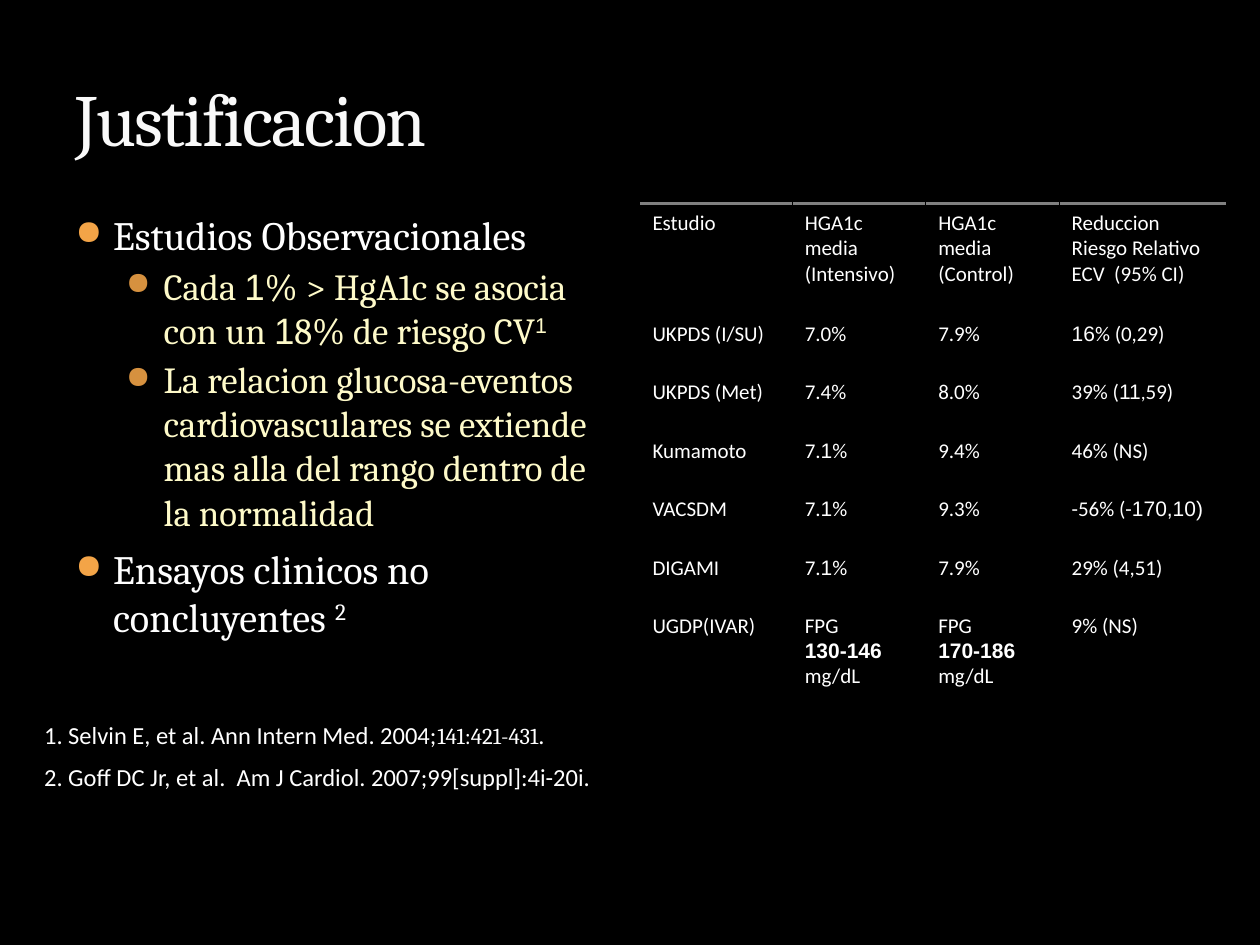
"""Build the slide "Justificacion": observational evidence beside a table of trials."""
from lxml import etree
from pptx import Presentation
from pptx.dml.color import RGBColor
from pptx.enum.text import MSO_ANCHOR, PP_ALIGN
from pptx.oxml.ns import qn
from pptx.util import Cm, Pt

LEFT, JUSTIFY = PP_ALIGN.LEFT, PP_ALIGN.JUSTIFY
BOTTOM = MSO_ANCHOR.BOTTOM
BLACK, WHITE, GREY = "000000", "FFFFFF", "808080"

ARIAL = {"name": "Arial"}
ARIAL_BOLD = {"name": "Arial", "bold": True}
SUPERSCRIPT = {"baseline": 30000}
ARIAL_SUPERSCRIPT = {"name": "Arial", "baseline": 30000}
CAMBRIA_SMALL = {"name": "Cambria", "size": 13}
SMALL = {"size": 11}

TITLE = "Justificacion"
LEVELS = [
    {"size": 23, "color": WHITE, "bullet": "F3A447", "indent": 0.76, "before": 6},
    {"size": 21, "color": "FEFAC9", "bullet": "D6913F", "indent": 1.78, "before": 3},
]
BULLETS = [
    (0, ["Estudios Observacionales"]),
    (1, ["Cada ", ("1", ARIAL), "% > HgA1c se asocia con un ", ("1", ARIAL),
         "8% de riesgo CV", ("1", ARIAL_SUPERSCRIPT)]),
    (1, ["La relacion glucosa-eventos cardiovasculares se extiende "
         "mas alla del rango dentro de la normalidad"]),
    (0, ["Ensayos clinicos no concluyentes ", ("2", SUPERSCRIPT)]),
]
REFERENCES = [
    ["1. Selvin E, et al. Ann Intern Med. 2004;", ("141:421-431", CAMBRIA_SMALL), "."],
    ["2. Goff DC Jr, et al.  Am J Cardiol. 2007;99[suppl]:4i-20i."],
]
SEVEN_ONE = [["7.", ("1", ARIAL), "%"]]
TRIALS = [
    [[["Estudio"]], [["HGA1c  media"], ["(Intensivo)"]], [["HGA1c  media"], ["(Control)"]],
     [["Reduccion Riesgo Relativo ECV  (95% CI)"]]],
    [[["UKPDS (I/SU)"]], [["7.0%"]], [["7.9%"]], [[("16", ARIAL), "% (0,29)"]]],
    [[["UKPDS (Met)"]], [["7.4%"]], [["8.0%"]],
     [["39% (", ("11", ARIAL), (",", SMALL), "59)"]]],
    [[["Kumamoto"]], SEVEN_ONE, [["9.4%"]], [["46% (NS)"]]],
    [[["VACSDM"]], SEVEN_ONE, [["9.3%"]], [["-56% (-", ("170,10)", ARIAL)]]],
    [[["DIGAMI"]], SEVEN_ONE, [["7.9%"]], [["29% (4,51)"]]],
    [[["UGDP(IVAR)"]],
     [["FPG"], [("130-146", ARIAL_BOLD), (" ", SMALL), "mg/dL"]],
     [["FPG"], [("170-186", ARIAL_BOLD)], ["mg/dL"]],
     [["9% (NS)"]]],
]
COLUMN_WIDTHS = [3.07, 2.69, 2.69, 3.38]
ROW_HEIGHTS = [2.24] + [1.18] * 5 + [2.74]


def rgb(value):
    """Turn a hex string into a colour."""
    return RGBColor.from_string(value)


def place(shape, left, top, width, height):
    """Set a shape's box in centimetres."""
    shape.left, shape.top = Cm(left), Cm(top)
    shape.width, shape.height = Cm(width), Cm(height)


def write(paragraph, pieces, name, size, color):
    """Fill a paragraph with pieces, each plain text or text with its overrides."""
    paragraph.font.name, paragraph.font.size = name, Pt(size)
    paragraph.font.color.rgb = rgb(color)
    for piece in pieces:
        text, style = (piece, {}) if isinstance(piece, str) else piece
        run = paragraph.add_run()
        run.text = text
        run.font.name = style.get("name", name)
        run.font.size = Pt(style.get("size", size))
        run.font.color.rgb = rgb(color)
        if "bold" in style:
            run.font.bold = style["bold"]
        if "baseline" in style:
            run.font._element.set("baseline", str(style["baseline"]))


def paragraphs_for(frame, items):
    """Yield a paragraph of the frame with each item."""
    for index, item in enumerate(items):
        yield (frame.add_paragraph() if index else frame.paragraphs[0]), item


def add_text_box(slide, *box):
    """Add a wrapping text box and return its frame."""
    frame = slide.shapes.add_textbox(*map(Cm, box)).text_frame
    frame.word_wrap = True
    return frame


def set_bullet(paragraph, color, indent):
    """Give a paragraph a round bullet with a hanging indent."""
    properties = paragraph._p.get_or_add_pPr()
    properties.set("marL", str(Cm(indent)))
    properties.set("indent", str(Cm(-0.76)))
    bullet_color = etree.SubElement(properties, qn("a:buClr"))
    etree.SubElement(bullet_color, qn("a:srgbClr"), val=color)
    etree.SubElement(properties, qn("a:buSzPct"), val="85000")
    etree.SubElement(properties, qn("a:buChar"), char="●")


def set_borders(cell, top_color, top_width):
    """Draw the four borders of a cell."""
    properties = cell._tc.get_or_add_tcPr()
    borders = [("lnL", BLACK, 0.75), ("lnR", BLACK, 0.75),
               ("lnT", top_color, top_width), ("lnB", BLACK, 0.75)]
    for position, (tag, color, width) in enumerate(borders):
        line = etree.Element(qn(f"a:{tag}"), w=str(Pt(width)))
        fill = etree.SubElement(line, qn("a:solidFill"))
        etree.SubElement(fill, qn("a:srgbClr"), val=color)
        properties.insert(position, line)


def add_title(slide):
    """Format and fill the title placeholder."""
    title = slide.shapes.title
    place(title, 1.27, 0.2, 22.86, 3.18)
    title.text_frame.vertical_anchor = BOTTOM
    paragraph = title.text_frame.paragraphs[0]
    paragraph.alignment = LEFT
    write(paragraph, [TITLE], "Cambria", 42, "F9F9F9")
    paragraph.runs[0].font._element.set("spc", "-100")


def add_bullets(slide):
    """Add the two-level list."""
    frame = add_text_box(slide, 1.27, 4.11, 11.23, 12.57)
    for paragraph, (level, pieces) in paragraphs_for(frame, BULLETS):
        look = LEVELS[level]
        paragraph.level = level
        paragraph.space_before = Pt(look["before"])
        set_bullet(paragraph, look["bullet"], look["indent"])
        write(paragraph, pieces, "Cambria", look["size"], look["color"])


def add_trials(slide):
    """Add the table of trials."""
    box = (12.9, 4.11, sum(COLUMN_WIDTHS), sum(ROW_HEIGHTS))
    table = slide.shapes.add_table(len(TRIALS), len(COLUMN_WIDTHS), *map(Cm, box)).table
    table.first_row = table.horz_banding = False
    for column, width in zip(table.columns, COLUMN_WIDTHS):
        column.width = Cm(width)
    for row, height in zip(table.rows, ROW_HEIGHTS):
        row.height = Cm(height)
    for row_index, trial in enumerate(TRIALS):
        top = (BLACK, 0.75) if row_index else (GREY, 2)
        for column_index, content in enumerate(trial):
            cell = table.cell(row_index, column_index)
            cell.fill.background()
            set_borders(cell, *top)
            for paragraph, pieces in paragraphs_for(cell.text_frame, content):
                paragraph.alignment = JUSTIFY if row_index or not column_index else LEFT
                write(paragraph, pieces, "Calibri", 12, WHITE)


def add_references(slide):
    """Add the numbered references."""
    frame = add_text_box(slide, 0.64, 14.4, 13.34, 1.75)
    for paragraph, pieces in paragraphs_for(frame, REFERENCES):
        paragraph.space_before = Pt(7)
        write(paragraph, pieces, "Calibri", 14, WHITE)


def main():
    """Build and save the presentation."""
    presentation = Presentation()
    presentation.slide_width, presentation.slide_height = Cm(25.4), Cm(19.05)
    slide = presentation.slides.add_slide(presentation.slide_layouts[5])
    slide.background.fill.solid()
    slide.background.fill.fore_color.rgb = rgb(BLACK)
    add_title(slide)
    add_bullets(slide)
    add_trials(slide)
    add_references(slide)
    presentation.save("out.pptx")


if __name__ == "__main__":
    main()
